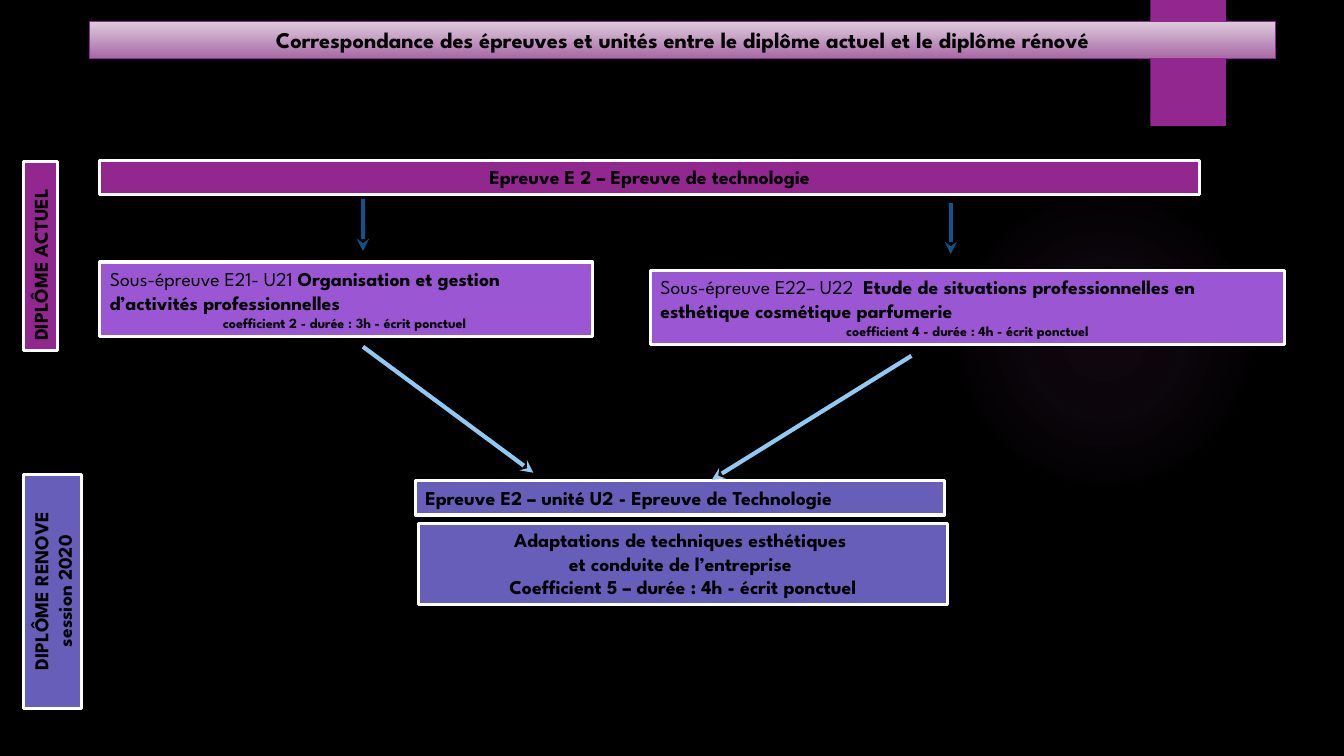
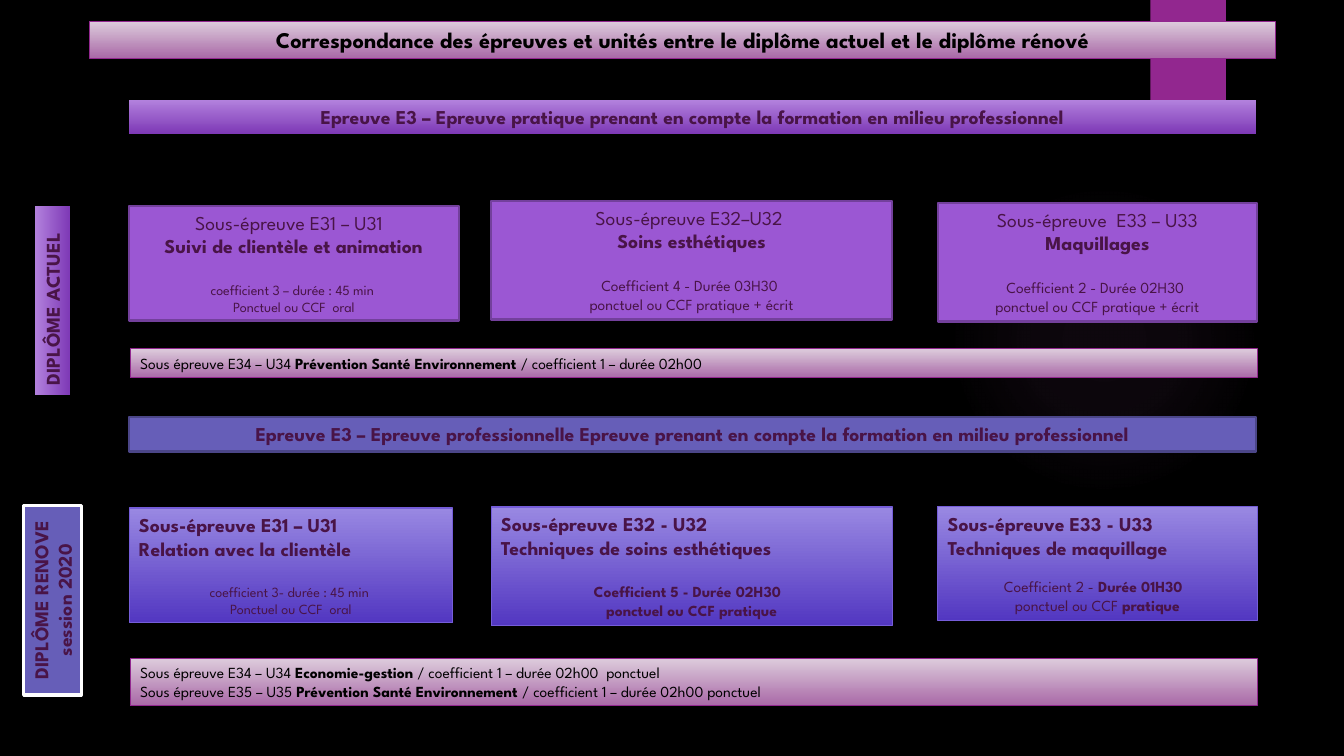
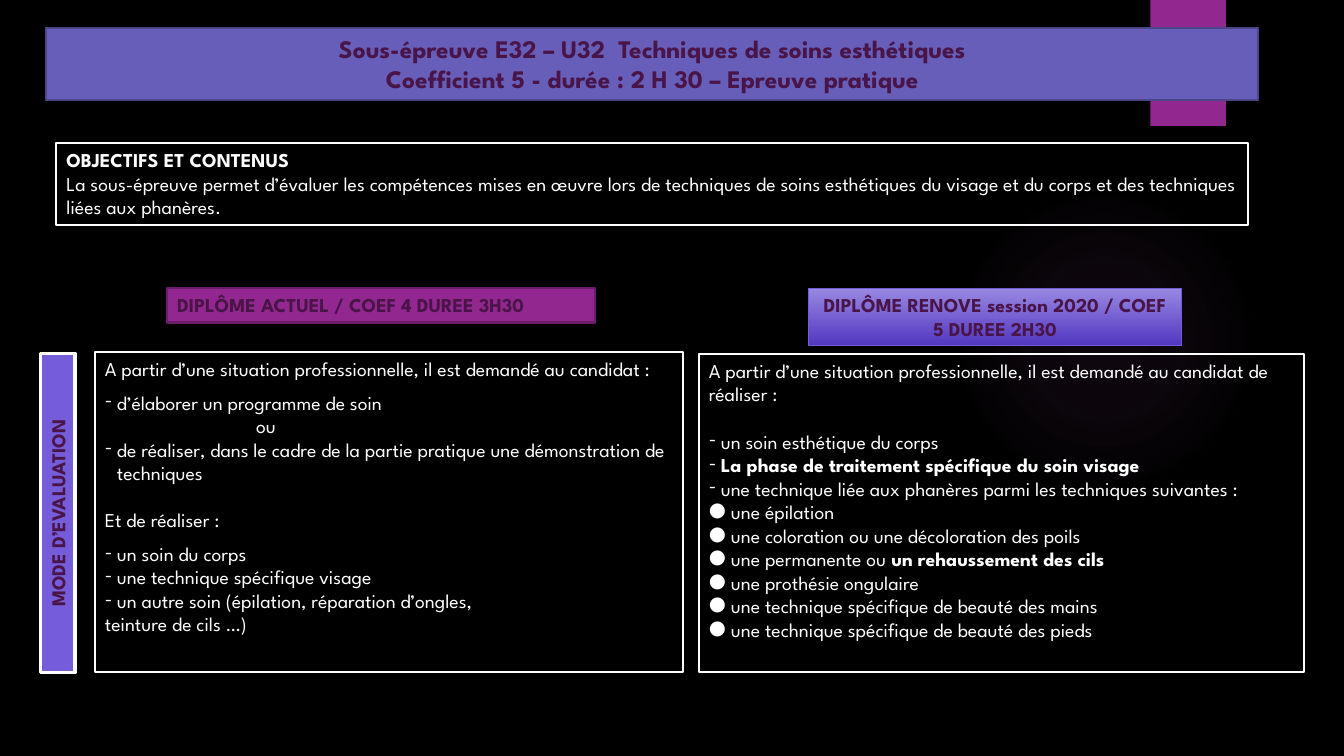
from dataclasses import dataclass
from typing import Any, NamedTuple, Optional

from lxml.etree import SubElement
from pptx import Presentation
from pptx.dml.color import RGBColor
from pptx.enum.shapes import MSO_CONNECTOR, MSO_SHAPE
from pptx.enum.text import MSO_ANCHOR, MSO_AUTO_SIZE, PP_ALIGN
from pptx.oxml import parse_xml
from pptx.oxml.ns import nsdecls, qn
from pptx.util import Inches, Pt

FONT = "League Spartan"
HEX = {
    "black": "000000", "white": "FFFFFF", "plum": "491447",
    "berry": "92278F", "wine": "6C1D6A", "rose": "DDCCDC", "mauve": "A969A7",
    "violet": "9B57D3", "grape": "73409C", "lilac": "B281DD", "purple": "7E39B6",
    "slate": "665EB8", "dusk": "4B4688", "iris": "755DD9", "pale": "9988E2",
    "deep": "5237C1", "navy": "0D558C", "sky": "8FC9F4", "glow": "BA69B8",
}
FRAME = {
    "word_wrap": True, "auto_size": MSO_AUTO_SIZE.NONE,
    "vertical_anchor": MSO_ANCHOR.TOP,
    "margin_left": Inches(0.1), "margin_right": Inches(0.1),
    "margin_top": Inches(0.05), "margin_bottom": Inches(0.05),
}
HANG = {"-": 0.12, "●": 0.22}


class Look(NamedTuple):
    fill: tuple[str, ...] = ()
    line: str = ""
    width: float = 0
    ink: str = "plum"


class Para(NamedTuple):
    text: str
    size: float = 14
    mid: bool = False
    gap: float = 0
    mark: str = ""
    left: float = 0


@dataclass
class Box:
    x: float
    y: float
    w: float
    h: float
    look: Look
    paras: list[Para]
    turn: int = 0
    slot: Optional[int] = None


class Arrow(NamedTuple):
    x1: float
    y1: float
    x2: float
    y2: float
    color: str


BAND = Look(("rose", "mauve"), "berry", 0.75, "black")
BERRY = Look(("berry",), "white", 2.25, "black")
VIOLET = Look(("violet",), "white", 2.25, "black")
SLATE = Look(("slate",), "white", 2.25, "black")
LILAC = Look(("lilac", "purple"))
GRAPE = Look(("violet",), "grape", 1.5)
DUSK = Look(("slate",), "dusk", 1.5)
IRIS = Look(("pale", "deep"), "iris", 0.75)
OPEN = Look((), "white", 1.5, "white")
OLD = "*DIPLÔME ACTUEL*"
NEW = "*DIPLÔME RENOVE session 2020*"


def head() -> Box:
    title = "*Correspondance des épreuves et unités entre le diplôme actuel et le diplôme rénové*"
    return Box(0.89, 0.21, 11.76, 0.37, BAND, [Para(title, 16, True)], slot=0)


def rgb(name: str) -> RGBColor:
    return RGBColor.from_string(HEX[name])


def apply(target: Any, values: dict[str, Any]) -> None:
    for key, value in values.items():
        setattr(target, key, value)


def paint(shape: Any, look: Look) -> None:
    shape.shadow.inherit = False
    if len(look.fill) == 2:
        shape.fill.gradient()
        shape.fill.gradient_angle = 270
        for stop, name in zip(shape.fill.gradient_stops, look.fill):
            stop.color.rgb = rgb(name)
    elif look.fill:
        shape.fill.solid()
        shape.fill.fore_color.rgb = rgb(look.fill[0])
    else:
        shape.fill.background()
    if look.line:
        shape.line.color.rgb = rgb(look.line)
        shape.line.width = Pt(look.width)
    else:
        shape.line.fill.background()


def write(item: Any, para: Para, ink: str) -> None:
    hang = HANG.get(para.mark, 0)
    props = item._p.get_or_add_pPr()
    props.set("marL", str(Inches(para.left + hang)))
    props.set("indent", str(-Inches(hang)))
    if para.mark:
        SubElement(props, qn("a:buFont")).set("typeface", FONT)
        SubElement(props, qn("a:buChar")).set("char", para.mark)
    else:
        SubElement(props, qn("a:buNone"))
    apply(item, {
        "alignment": PP_ALIGN.CENTER if para.mid else PP_ALIGN.LEFT,
        "space_before": Pt(para.gap),
    })
    for place, part in enumerate(para.text.split("*")):
        if part:
            run = item.add_run()
            run.text = part
            apply(run.font, {"name": FONT, "size": Pt(para.size), "bold": place % 2 == 1})
            run.font.color.rgb = rgb(ink)


def draw(slide: Any, box: Box) -> None:
    spot = [Inches(n) for n in (box.x, box.y, box.w, box.h)]
    if box.slot is None:
        shape = slide.shapes.add_shape(MSO_SHAPE.RECTANGLE, *spot)
    else:
        shape = slide.placeholders[box.slot]
        apply(shape, dict(zip(("left", "top", "width", "height"), spot)))
    shape.rotation = box.turn
    paint(shape, box.look)
    frame = shape.text_frame
    apply(frame, FRAME)
    for place, para in enumerate(box.paras):
        item = frame.add_paragraph() if place else frame.paragraphs[0]
        write(item, para, box.look.ink)


def point(slide: Any, arrow: Arrow) -> None:
    ends = [Inches(n) for n in arrow[:4]]
    link = slide.shapes.add_connector(MSO_CONNECTOR.STRAIGHT, *ends)
    link.line.color.rgb = rgb(arrow.color)
    link.line.width = Pt(3)
    SubElement(link.line._get_or_add_ln(), qn("a:tailEnd")).set("type", "stealth")
    SubElement(link._element.spPr, qn("a:effectLst"))


def dress(deck: Any, slide: Any) -> None:
    master = deck.slide_master
    master.background.fill.solid()
    master.background.fill.fore_color.rgb = rgb("black")
    halo = slide.shapes.add_shape(
        MSO_SHAPE.OVAL, Inches(9.41), Inches(1.83), Inches(3.08), Inches(3.08))
    paint(halo, Look())
    stops = "".join(
        f'<a:gs pos="{pos}000"><a:srgbClr val="{HEX["glow"]}">'
        f'<a:alpha val="{alpha}000"/></a:srgbClr></a:gs>'
        for pos, alpha in ((0, 7), (36, 6), (69, 0)))
    fade = parse_xml(
        f'<a:gradFill {nsdecls("a")} rotWithShape="1"><a:gsLst>{stops}</a:gsLst>'
        '<a:path path="circle"><a:fillToRect l="50000" t="50000" r="50000" b="50000"/>'
        '</a:path></a:gradFill>')
    props = halo._element.spPr
    props.replace(props.find(qn("a:noFill")), fade)
    tab = slide.shapes.add_shape(
        MSO_SHAPE.RECTANGLE, Inches(11.41), 0, Inches(0.75), Inches(1.25))
    paint(tab, Look(("berry",)))
    for place, shape in enumerate((halo, tab)):
        master.shapes.element.insert(2 + place, shape.element)


def exam(x: float, y: float, w: float, h: float, look: Look, tops: list[str],
         lows: list[str], size: float = 11, gap: float = 16.8) -> Box:
    mid = look is GRAPE
    paras = [Para(text, mid=mid) for text in tops]
    paras += [Para(text, size, True, 0 if place else gap) for place, text in enumerate(lows)]
    return Box(x, y, w, h, look, paras)


TECH = [
    head(),
    Box(0.99, 1.59, 10.91, 0.34, BERRY, [Para("*Epreuve E 2 – Epreuve de technologie*", mid=True)]),
    Box(0.99, 2.6, 4.89, 0.74, VIOLET, [
        Para("Sous-épreuve E21- U21 *Organisation et gestion d’activités professionnelles*"),
        Para("*coefficient 2 - durée : 3h - écrit ponctuel *", 10, True)]),
    Box(6.45, 2.68, 6.29, 0.74, VIOLET, [
        Para("Sous-épreuve E22– U22  *Etude de situations professionnelles en esthétique cosmétique parfumerie*"),
        Para("*coefficient 4 - durée : 4h - écrit ponctuel*", 10, True)]),
    Box(4.12, 4.77, 5.25, 0.34, SLATE, [Para("*Epreuve E2 – unité U2 - Epreuve de Technologie*")]),
    Box(4.15, 5.19, 5.25, 0.81, SLATE, [
        Para("*Adaptations de techniques esthétiques *", mid=True),
        Para("*et conduite de l’entreprise *", mid=True),
        Para("*Coefficient 5 – durée : 4h - écrit ponctuel*", mid=True)]),
    Box(-0.54, 2.37, 1.88, 0.34, BERRY, [Para(OLD)], 270),
    Box(-0.64, 5.58, 2.32, 0.57, SLATE, [Para(NEW, mid=True)], 270),
]
ARROWS = [
    Arrow(3.6, 1.97, 3.6, 2.49, "navy"),
    Arrow(9.43, 2.01, 9.43, 2.52, "navy"),
    Arrow(9.04, 3.53, 7.06, 4.76, "sky"),
    Arrow(3.6, 3.44, 5.29, 4.69, "sky"),
]
CARE = [
    head(),
    Box(1.28, 0.99, 11.18, 0.34, LILAC, [
        Para("*Epreuve E3 – Epreuve pratique prenant en compte la formation en milieu professionnel*", mid=True)]),
    exam(1.28, 2.04, 3.27, 1.14, GRAPE,
         ["Sous-épreuve E31 – U31  ", "*Suivi de clientèle et animation*"],
         ["coefficient 3 – durée : 45 min ", "Ponctuel ou CCF  oral"], 10),
    exam(4.87, 1.99, 3.98, 1.18, GRAPE,
         ["Sous-épreuve E32–U32 ", "*Soins esthétiques*"],
         ["Coefficient 4 - Durée 03H30 ", "ponctuel ou CCF pratique + écrit"]),
    exam(9.3, 2.01, 3.17, 1.18, GRAPE,
         ["Sous-épreuve  E33 – U33 *Maquillages*"],
         ["Coefficient 2 - Durée 02H30 ", "ponctuel ou CCF pratique + écrit"]),
    Box(1.29, 3.46, 11.18, 0.29, BAND, [
        Para("Sous épreuve E34 – U34 *Prévention Santé Environnement* / coefficient 1 – durée 02h00", 11)]),
    Box(1.28, 4.14, 11.18, 0.34, DUSK, [
        Para("*Epreuve E3 – Epreuve professionnelle Epreuve prenant en compte la formation en milieu professionnel*", mid=True)]),
    exam(1.28, 5.04, 3.21, 1.14, IRIS,
         ["*Sous-épreuve E31 – U31*", "*Relation avec la clientèle*"],
         ["coefficient 3- durée : 45 min ", "Ponctuel ou CCF  oral"], 10),
    exam(4.87, 5.03, 3.98, 1.18, IRIS,
         ["*Sous-épreuve E32 - U32*", "*Techniques de soins esthétiques*"],
         ["*Coefficient 5 - Durée 02H30  *", "*ponctuel ou CCF pratique*"]),
    exam(9.3, 5.03, 3.17, 1.13, IRIS,
         ["*Sous-épreuve E33 - U33 Techniques de maquillage*"],
         ["Coefficient 2 - *Durée 01H30  *", "ponctuel ou CCF *pratique*"], gap=13.2),
    Box(1.29, 6.53, 11.18, 0.47, BAND, [
        Para("Sous épreuve E34 – U34 *Economie-gestion* / coefficient 1 – durée 02h00  ponctuel", 11),
        Para("Sous épreuve E35 – U35 *Prévention Santé Environnement */ coefficient 1 – durée 02h00 ponctuel", 11)]),
    Box(-0.42, 2.81, 1.88, 0.34, LILAC, [Para(OLD)], 270),
    Box(-0.42, 5.67, 1.88, 0.57, SLATE._replace(ink="plum"), [Para(NEW, mid=True)], 270),
]
SKILLS = [
    "une épilation", "une coloration ou une décoloration des poils",
    "une permanente ou *un rehaussement des cils*", "une prothésie ongulaire",
    "une technique spécifique de beauté des mains",
    "une technique spécifique de beauté des pieds",
]
SKIN = [
    Box(0.56, 0.28 - 0.1 + 0.1, 12.02, 0.71, DUSK, [], slot=0),
]
SKIN = [
    Box(0.46, 0.28, 12.02, 0.71, DUSK, [
        Para("*Sous-épreuve E32 – U32  Techniques de soins esthétiques*", 18, True),
        Para("*Coefficient 5 - durée : 2 H 30 – Epreuve pratique*", 18, True)], slot=0),
    Box(0.56, 1.42, 11.82, 0.81, OPEN, [
        Para("*OBJECTIFS ET CONTENUS*"),
        Para("La sous-épreuve permet d’évaluer les compétences mises en œuvre lors de techniques de soins esthétiques du visage et du corps et des techniques liées aux phanères.")]),
    Box(1.66, 2.86, 4.24, 0.34, Look(("berry",), "wine", 1.5), [
        Para("*DIPLÔME ACTUEL / COEF 4 DUREE 3H30*")]),
    Box(8.02, 2.86, 3.7, 0.57, IRIS, [
        Para("*DIPLÔME RENOVE session 2020 / COEF 5 DUREE 2H30*", mid=True)]),
    Box(0.94, 3.49, 5.83, 3.18, OPEN, [
        Para("A partir d’une situation professionnelle, il est demandé au candidat :"),
        Para("d’élaborer un programme de soin", gap=7.2, mark="-"),
        Para("ou", left=1.5),
        Para("de réaliser, dans le cadre de la partie pratique une démonstration de techniques", mark="-"),
        Para("Et de réaliser :", gap=16.8),
        Para("un soin du corps", gap=7.2, mark="-"),
        Para("une technique spécifique visage", mark="-"),
        Para("un autre soin (épilation, réparation d’ongles,", mark="-"),
        Para("teinture de cils …)")], slot=1),
    Box(6.93, 3.51, 6, 3.16, OPEN, [
        Para("A partir d’une situation professionnelle, il est demandé au candidat de réaliser :"),
        Para("un soin esthétique du corps", gap=16.8, mark="-"),
        Para("*La phase de traitement spécifique du soin visage*", mark="-"),
        Para("une technique liée aux phanères parmi les techniques suivantes :", mark="-"),
        *(Para(text, mark="●") for text in SKILLS)], slot=2),
    Box(-1.01, 4.92, 3.17, 0.34, Look(("iris",), "white", 2.25), [
        Para("*MODE D’EVALUATION*", mid=True)], 270),
]


def main() -> None:
    deck = Presentation()
    deck.slide_width, deck.slide_height = Inches(13.33), Inches(7.5)
    pages = ((5, TECH, ARROWS), (5, CARE, []), (3, SKIN, []))
    for place, (layout, boxes, arrows) in enumerate(pages):
        slide = deck.slides.add_slide(deck.slide_layouts[layout])
        if place == 0:
            dress(deck, slide)
        for box in boxes:
            draw(slide, box)
        for arrow in arrows:
            point(slide, arrow)
    deck.save("out.pptx")


if __name__ == "__main__":
    main()
